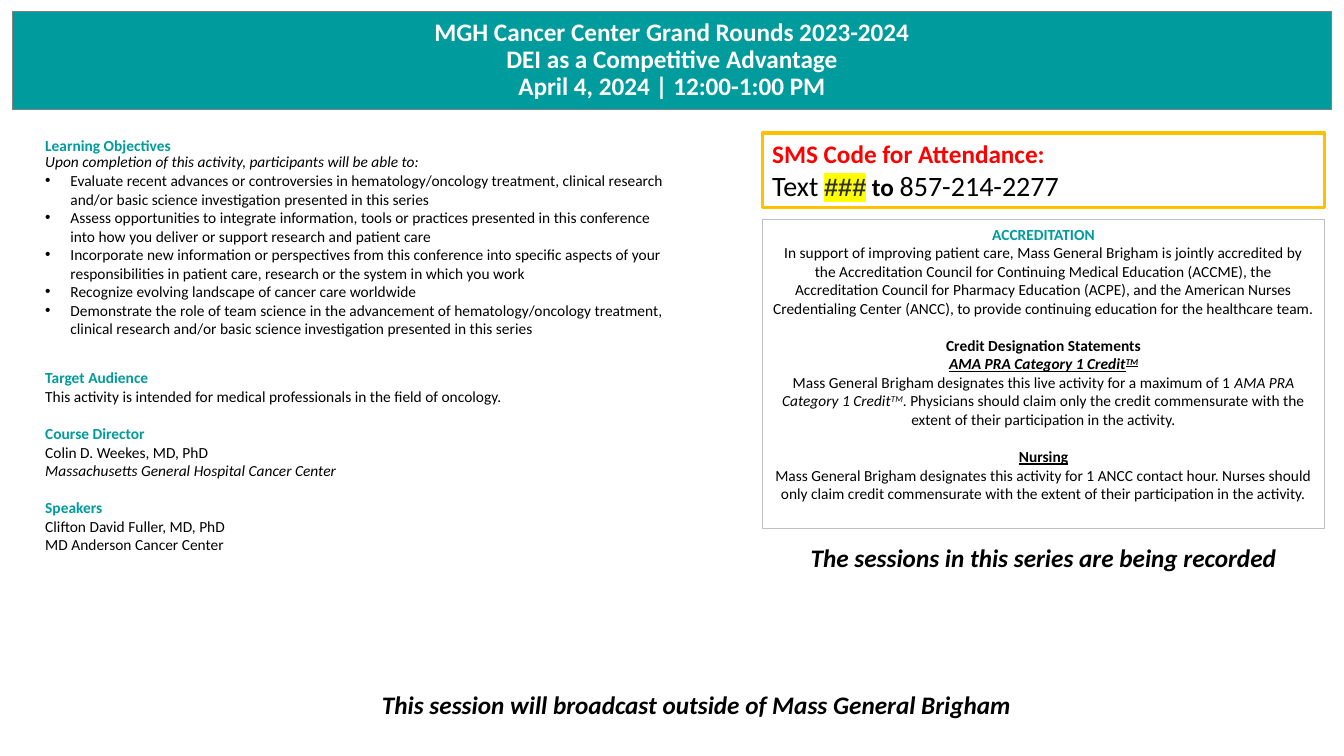
from dataclasses import dataclass

from lxml.etree import SubElement
from pptx import Presentation
from pptx.dml.color import RGBColor
from pptx.enum.shapes import MSO_SHAPE
from pptx.enum.text import MSO_ANCHOR, MSO_AUTO_SIZE, PP_ALIGN
from pptx.oxml import parse_xml
from pptx.oxml.ns import nsdecls, qn
from pptx.util import Inches, Pt

COLORS = {
    "teal": "009B9C", "white": "FFFFFF", "black": "000000", "red": "FF0000",
    "gold": "FFC000", "yellow": "FFFF00", "ink": "2F2F2F",
    "gray": "808080", "silver": "BFBFBF",
}
LINE = 13.4  # height of one 11 pt line


@dataclass
class Run:
    text: str
    style: dict


@dataclass
class Para:
    runs: list[Run]
    before: float = 0
    spacing: float = 1.0
    bullet: bool = False


@dataclass
class Box:
    left: float
    top: float
    width: float
    height: float
    paras: list[Para]
    center: bool = False
    border: str = ""
    weight: float = 0.75


def rgb(name: str) -> RGBColor:
    return RGBColor.from_string(COLORS[name])


def put(para, text: str, *, size: float = 11, color: str = "black", bold: bool = False,
        italic: bool = False, under: bool = False, face: str = "Calibri",
        mark: str = "", raised: bool = False) -> None:
    run = para.add_run()
    run.text = text
    font = run.font
    font.size, font.bold, font.italic, font.underline = Pt(size), bold, italic, under
    font.color.rgb = rgb(color)
    font.name = face
    props = run._r.get_or_add_rPr()
    if raised:
        props.set("baseline", "30000")
    if mark:
        props.find(qn("a:solidFill")).addnext(parse_xml(
            f'<a:highlight {nsdecls("a")}><a:srgbClr val="{COLORS[mark]}"/></a:highlight>'))


def line(text: str, before: float = 0, spacing: float = 1.0, bullet: bool = False,
         **style) -> Para:
    return Para([Run(text, style)], before, spacing, bullet)


def head(text: str, before: float = 0, spacing: float = 1.0) -> Para:
    return line(text, before, spacing, color="teal", bold=True)


def fill(frame, paras: list[Para], center: bool) -> None:
    frame.word_wrap = True
    frame.auto_size = MSO_AUTO_SIZE.NONE
    for i, item in enumerate(paras):
        para = frame.paragraphs[0] if i == 0 else frame.add_paragraph()
        para.alignment = PP_ALIGN.CENTER if center else PP_ALIGN.LEFT
        para.line_spacing = item.spacing
        para.space_before = Pt(item.before)
        if item.bullet:
            props = para._p.get_or_add_pPr()
            props.set("marL", str(Inches(0.25)))
            props.set("indent", str(-Inches(0.25)))
            SubElement(props, qn("a:buFont")).set("typeface", "Arial")
            SubElement(props, qn("a:buChar")).set("char", "•")
        for run in item.runs:
            put(para, run.text, **run.style)


def draw(slide, box: Box) -> None:
    place = [Inches(n) for n in (box.left, box.top, box.width, box.height)]
    if box.border:
        shape = slide.shapes.add_shape(MSO_SHAPE.RECTANGLE, *place)
        shape.shadow.inherit = False
        shape.fill.background()
        shape.line.color.rgb = rgb(box.border)
        shape.line.width = Pt(box.weight)
    else:
        shape = slide.shapes.add_textbox(*place)
    shape.text_frame.vertical_anchor = MSO_ANCHOR.TOP
    fill(shape.text_frame, box.paras, box.center)


def banner(slide, texts: list[str]) -> None:
    title = slide.shapes.title
    title.left, title.top = Inches(0.12), Inches(0.11)
    title.width, title.height = Inches(13.09), Inches(0.98)
    title.fill.solid()
    title.fill.fore_color.rgb = rgb("teal")
    title.line.color.rgb = rgb("gray")
    title.line.width = Pt(0.75)
    title.text_frame.vertical_anchor = MSO_ANCHOR.MIDDLE
    fill(title.text_frame, [line(t, spacing=0.9, size=18, color="white", bold=True)
                            for t in texts], True)


TITLE = [
    "MGH Cancer Center Grand Rounds 2023-2024",
    "DEI as a Competitive Advantage",
    "April 4, 2024 | 12:00-1:00 PM",
]
GOALS = [
    "Evaluate recent advances or controversies in hematology/oncology treatment, clinical research and/or basic science investigation presented in this series",
    "Assess opportunities to integrate information, tools or practices presented in this conference into how you deliver or support research and patient care",
    "Incorporate new information or perspectives from this conference into specific aspects of your responsibilities in patient care, research or the system in which you work",
    "Recognize evolving landscape of cancer care worldwide",
    "Demonstrate the role of team science in the advancement of hematology/oncology treatment, clinical research and/or basic science investigation presented in this series",
]
# Left column: goals, audience and people
ABOUT = [
    head("Learning Objectives", spacing=0.9),
    line("Upon completion of this activity, participants will be able to:",
         spacing=0.9, italic=True),
    *[line(goal, bullet=True) for goal in GOALS],
    head("Target Audience", before=22),
    line("This activity is intended for medical professionals in the field of oncology."),
    head("Course Director", before=LINE),
    line("Colin D. Weekes, MD, PhD"),
    line("Massachusetts General Hospital Cancer Center", italic=True),
    head("Speakers", before=LINE),
    line("Clifton David Fuller, MD, PhD"),
    line("MD Anderson Cancer Center"),
]
# Right column: accreditation and credit
STRONG = dict(bold=True, italic=True, under=True)
CREDIT = [
    head("ACCREDITATION"),
    line("In support of improving patient care, Mass General Brigham is jointly accredited by the Accreditation Council for Continuing Medical Education (ACCME), the Accreditation Council for Pharmacy Education (ACPE), and the American Nurses Credentialing Center (ANCC), to provide continuing education for the healthcare team."),
    line("Credit Designation Statements", before=LINE, bold=True),
    Para([Run("AMA PRA Category 1 Credit", STRONG),
          Run("TM", STRONG | dict(raised=True))]),
    Para([Run("Mass General Brigham designates this live activity for a maximum of 1", {}),
          Run(" AMA PRA Category 1 Credit", dict(italic=True)),
          Run("TM", dict(italic=True, raised=True)),
          Run(". Physicians should claim only the credit commensurate with the extent of their participation in the activity.", {})]),
    line("Nursing", before=LINE, bold=True, under=True),
    line("Mass General Brigham designates this activity for 1 ANCC contact hour. Nurses should only claim credit commensurate with the extent of their participation in the activity."),
]
# Attendance code
CODE = [
    line("SMS Code for Attendance:", size=18, color="red", bold=True),
    Para([Run("Text", dict(size=20)),
          Run(" ", dict(size=18, bold=True)),
          Run("###", dict(size=18, color="ink", bold=True, face="Arial", mark="yellow")),
          Run(" to ", dict(size=18, bold=True)),
          Run("857-214-2277", dict(size=20))]),
]
NOTICE = dict(size=18, bold=True, italic=True)
BOXES = [
    Box(0.35, 1.32, 6.38, 5.82, ABOUT),
    Box(7.56, 2.18, 5.58, 3.06, CREDIT, center=True, border="silver"),
    Box(7.56, 1.32, 5.58, 0.74, CODE, border="gold", weight=2.25),
    Box(3.69, 6.79, 6.66, 0.4,
        [line("This session will broadcast outside of Mass General Brigham", **NOTICE)]),
    Box(7.56, 5.33, 5.58, 0.4,
        [line("The sessions in this series are being recorded", **NOTICE)], center=True),
]


def main() -> None:
    deck = Presentation()
    deck.slide_width, deck.slide_height = Inches(13.33), Inches(7.5)
    slide = deck.slides.add_slide(deck.slide_layouts[5])
    banner(slide, TITLE)
    for box in BOXES:
        draw(slide, box)
    deck.save("out.pptx")


if __name__ == "__main__":
    main()
